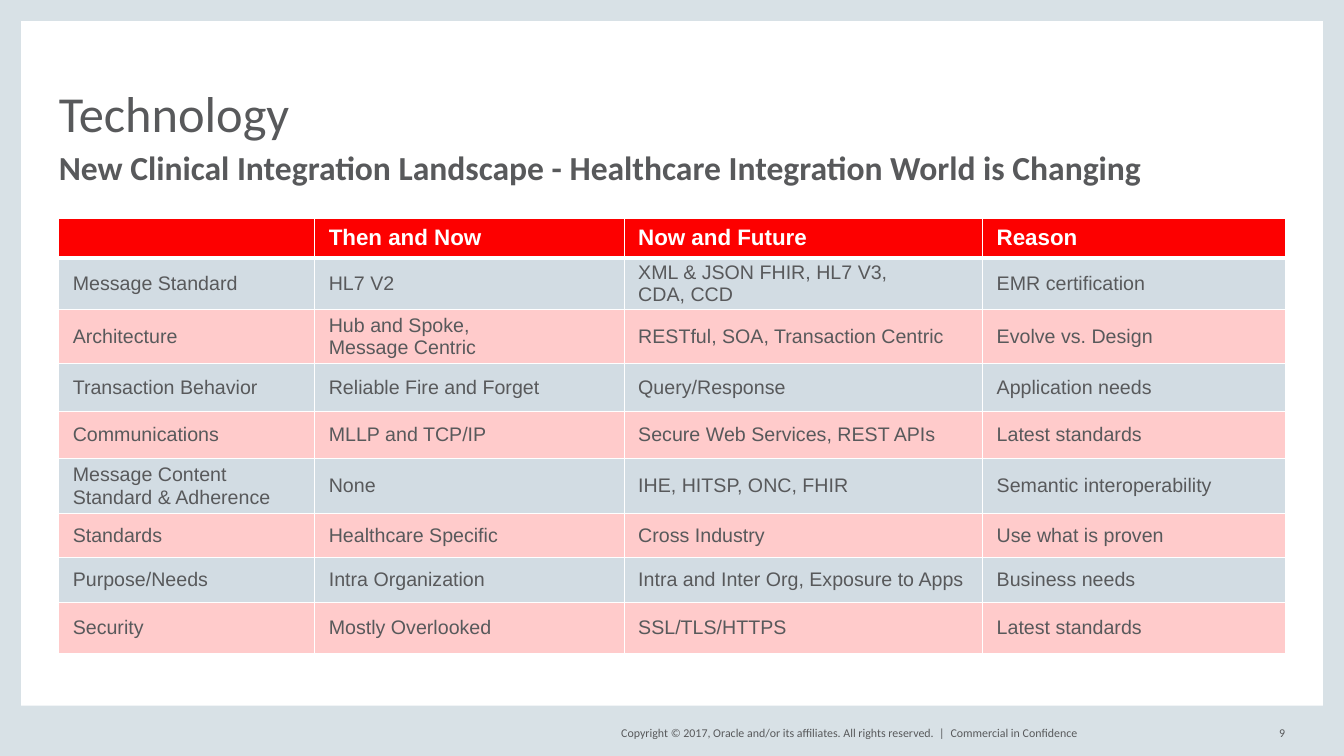
from copy import deepcopy
from dataclasses import dataclass
from typing import Any

from lxml import etree
from pptx import Presentation
from pptx.dml.color import RGBColor
from pptx.enum.shapes import MSO_SHAPE
from pptx.enum.text import MSO_ANCHOR, MSO_AUTO_SIZE, PP_ALIGN
from pptx.oxml.ns import qn
from pptx.util import Pt

RECTANGLE = MSO_SHAPE.RECTANGLE
TOP, MIDDLE, BOTTOM = MSO_ANCHOR.TOP, MSO_ANCHOR.MIDDLE, MSO_ANCHOR.BOTTOM
LEFT, RIGHT = PP_ALIGN.LEFT, PP_ALIGN.RIGHT
NO_AUTOFIT = MSO_AUTO_SIZE.NONE
TITLE_ONLY_LAYOUT = 5


@dataclass(frozen=True)
class Theme:
    ink: str = "58595B"
    white: str = "FFFFFF"
    frame: str = "D8E1E6"
    header: str = "FD0000"
    bands: tuple[str, str] = ("D2DCE3", "FFCBCB")
    heading_font: str = "Calibri"
    table_font: str = "Arial"
    title_size: float = 36
    subtitle_size: float = 24
    header_size: float = 16
    body_size: float = 14
    footer_size: float = 8.5


@dataclass(frozen=True)
class Box:
    left: float
    top: float
    width: float
    height: float

    def lengths(self) -> tuple[Pt, Pt, Pt, Pt]:
        return Pt(self.left), Pt(self.top), Pt(self.width), Pt(self.height)


@dataclass(frozen=True)
class FooterItem:
    text: str
    left: float
    width: float
    align: PP_ALIGN


@dataclass(frozen=True)
class Row:
    height: float
    texts: tuple[str, str, str, str]


THEME = Theme()
SLIDE_WIDTH, SLIDE_HEIGHT = 960, 540
EDGE, FOOTER_HEIGHT = 15, 36
MARGIN = 42

FRAME_BARS = (
    Box(0, 0, EDGE, SLIDE_HEIGHT),
    Box(SLIDE_WIDTH - EDGE, 0, EDGE, SLIDE_HEIGHT),
    Box(0, SLIDE_HEIGHT - FOOTER_HEIGHT, SLIDE_WIDTH, FOOTER_HEIGHT),
    Box(0, 0, SLIDE_WIDTH, EDGE),
)
TITLE_BOX = Box(MARGIN, 31.5, 786, 70)
SUBTITLE_BOX = Box(MARGIN, 108, 788, 27)
FOOTER_TOP, FOOTER_LINE = 516.5, 14.4
FOOTER = (
    FooterItem("Copyright © 2017, Oracle and/or its affiliates. All rights reserved.  |", 423, 252, RIGHT),
    FooterItem("Commercial in Confidence", 679, 213, LEFT),
    FooterItem("9", 892, 26, RIGHT),
)

TABLE_TOP = 156.2
COLUMN_WIDTHS = (182.9, 221, 256.1, 216)
ROWS = (
    Row(28, ("", "Then and Now", "Now and Future", "Reason")),
    Row(34, ("Message Standard", "HL7 V2", "XML & JSON FHIR, HL7 V3,\nCDA, CCD", "EMR certification")),
    Row(39, ("Architecture", "Hub and Spoke,\nMessage Centric", "RESTful, SOA, Transaction Centric",
             "Evolve vs. Design")),
    Row(34, ("Transaction Behavior", "Reliable Fire and Forget", "Query/Response", "Application needs")),
    Row(34, ("Communications", "MLLP and TCP/IP", "Secure Web Services, REST APIs", "Latest standards")),
    Row(39, ("Message Content Standard & Adherence", "None", "IHE, HITSP, ONC, FHIR",
             "Semantic interoperability")),
    Row(31.7, ("Standards", "Healthcare Specific", "Cross Industry", "Use what is proven")),
    Row(31.7, ("Purpose/Needs", "Intra Organization", "Intra and Inter Org, Exposure to Apps", "Business needs")),
    Row(36.7, ("Security", "Mostly Overlooked", "SSL/TLS/HTTPS", "Latest standards")),
)


def write(frame: Any, text: str, *, size: float, font: str = THEME.heading_font, color: str = THEME.ink,
          bold: bool = False, align: PP_ALIGN = LEFT, spacing: float = 1.0) -> None:
    paragraph = frame.paragraphs[0]
    paragraph.text = text
    paragraph.alignment = align
    paragraph.line_spacing = spacing
    for run in paragraph.runs:
        run.font.size = Pt(size)
        run.font.name = font
        run.font.bold = bold
        run.font.color.rgb = RGBColor.from_string(color)
    # A line break needs its run's size, or it makes the line taller.
    for line_break in paragraph._p.findall(qn("a:br")):
        line_break.append(deepcopy(paragraph.runs[0].font._element))


def prepare_frame(frame: Any, anchor: MSO_ANCHOR) -> None:
    """Fix the frame's size and remove its insets."""
    frame.word_wrap = True
    frame.auto_size = NO_AUTOFIT
    frame.vertical_anchor = anchor
    frame.margin_left = frame.margin_right = frame.margin_top = frame.margin_bottom = 0


def add_text(slide: Any, box: Box, text: str, anchor: MSO_ANCHOR, **text_format: Any) -> None:
    frame = slide.shapes.add_textbox(*box.lengths()).text_frame
    prepare_frame(frame, anchor)
    write(frame, text, **text_format)


def add_frame_bar(slide: Any, box: Box) -> None:
    bar = slide.shapes.add_shape(RECTANGLE, *box.lengths())
    bar.shadow.inherit = False
    bar.fill.solid()
    bar.fill.fore_color.rgb = RGBColor.from_string(THEME.frame)
    bar.line.fill.background()


def set_title(slide: Any, text: str) -> None:
    title = slide.shapes.title
    title.left, title.top, title.width, title.height = TITLE_BOX.lengths()
    prepare_frame(title.text_frame, BOTTOM)
    write(title.text_frame, text, size=THEME.title_size, spacing=0.8)


def set_borders(cell: Any, top: float, bottom: float) -> None:
    properties = cell._tc.get_or_add_tcPr()
    widths = {"a:lnL": 1, "a:lnR": 1, "a:lnT": top, "a:lnB": bottom}
    for position, (tag, width) in enumerate(widths.items()):
        line = etree.Element(qn(tag), w=str(Pt(width)))
        fill = etree.SubElement(line, qn("a:solidFill"))
        etree.SubElement(fill, qn("a:srgbClr"), val=THEME.white)
        properties.insert(position, line)


def fill_cell(cell: Any, text: str, row_index: int) -> None:
    is_header = row_index == 0
    cell.vertical_anchor = MIDDLE
    cell.margin_left = cell.margin_right = Pt(10)
    cell.margin_top = cell.margin_bottom = Pt(2.6)
    cell.fill.solid()
    background = THEME.header if is_header else THEME.bands[(row_index - 1) % 2]
    cell.fill.fore_color.rgb = RGBColor.from_string(background)
    set_borders(cell, top=3 if row_index == 1 else 1, bottom=3 if is_header else 1)
    write(cell.text_frame, text, font=THEME.table_font, bold=is_header,
          size=THEME.header_size if is_header else THEME.body_size,
          color=THEME.white if is_header else THEME.ink)


def add_comparison(slide: Any) -> None:
    box = Box(MARGIN, TABLE_TOP, sum(COLUMN_WIDTHS), sum(row.height for row in ROWS))
    table = slide.shapes.add_table(len(ROWS), len(COLUMN_WIDTHS), *box.lengths()).table
    table.horz_banding = False
    for column, width in zip(table.columns, COLUMN_WIDTHS):
        column.width = Pt(width)
    for row_index, row in enumerate(ROWS):
        table.rows[row_index].height = Pt(row.height)
        for column_index, text in enumerate(row.texts):
            fill_cell(table.cell(row_index, column_index), text, row_index)


def main() -> None:
    presentation = Presentation()
    presentation.slide_width, presentation.slide_height = Pt(SLIDE_WIDTH), Pt(SLIDE_HEIGHT)
    slide = presentation.slides.add_slide(presentation.slide_layouts[TITLE_ONLY_LAYOUT])
    for bar in FRAME_BARS:
        add_frame_bar(slide, bar)
    set_title(slide, "Technology")
    add_text(slide, SUBTITLE_BOX, "New Clinical Integration Landscape - Healthcare Integration World is Changing",
             TOP, size=THEME.subtitle_size, bold=True, spacing=0.9)
    add_comparison(slide)
    for item in FOOTER:
        add_text(slide, Box(item.left, FOOTER_TOP, item.width, FOOTER_LINE), item.text, MIDDLE,
                 size=THEME.footer_size, align=item.align)
    presentation.save("out.pptx")


if __name__ == "__main__":
    main()
